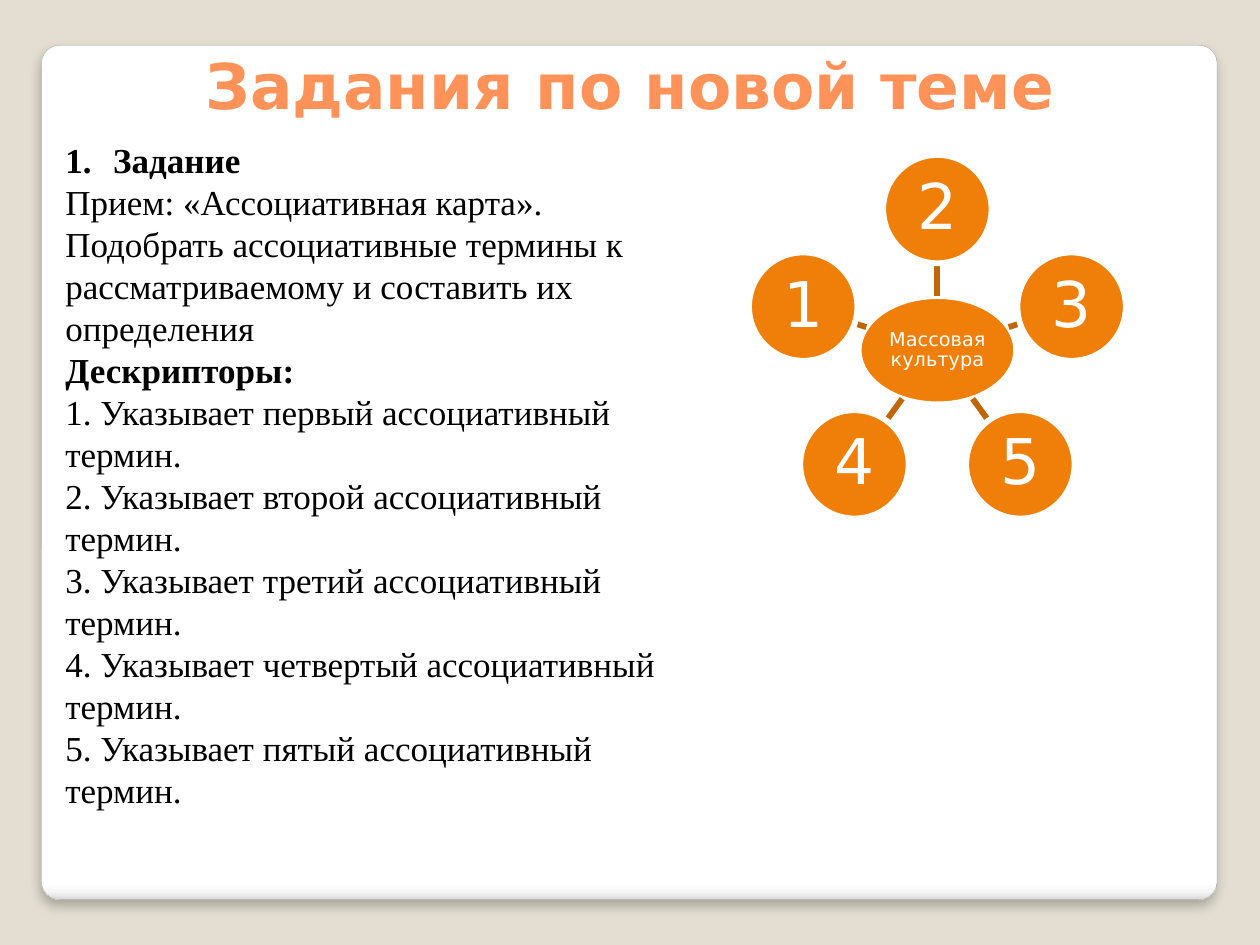
from dataclasses import dataclass
from math import cos, hypot, radians, sin

from lxml import etree
from pptx import Presentation
from pptx.dml.color import RGBColor
from pptx.enum.shapes import MSO_CONNECTOR, MSO_SHAPE
from pptx.enum.text import MSO_ANCHOR, PP_ALIGN
from pptx.oxml import parse_xml
from pptx.oxml.ns import nsdecls, qn
from pptx.util import Inches, Pt

CENTER = PP_ALIGN.CENTER
MIDDLE, BOTTOM = MSO_ANCHOR.MIDDLE, MSO_ANCHOR.BOTTOM
OVAL, ROUNDED = MSO_SHAPE.OVAL, MSO_SHAPE.ROUNDED_RECTANGLE
STRAIGHT = MSO_CONNECTOR.STRAIGHT


@dataclass(frozen=True)
class Theme:
    background = RGBColor.from_string("E3DED1")
    panel_line = RGBColor.from_string("A4A4A4")
    title = RGBColor.from_string("FF9258")
    bubble = RGBColor.from_string("F07F09")
    spoke = RGBColor.from_string("C06607")
    white = RGBColor.from_string("FFFFFF")
    black = RGBColor.from_string("000000")
    sans = "DejaVu Sans"
    serif = "Times New Roman"
    large = Pt(36)
    body = Pt(20)
    small = Pt(11)
    stroke = Pt(3.35)


theme = Theme()


def style(p, name, size, color, bold=False):
    p.font.name, p.font.size, p.font.bold = name, size, bold
    p.font.color.rgb = color


def add_bubble(x, y, w, h, text, size, inset):
    """Add an ellipse centred on x, y with its label."""
    sp = s.shapes.add_shape(OVAL, Inches(x - w / 2), Inches(y - h / 2), Inches(w), Inches(h))
    sp.shadow.inherit = False
    sp.fill.solid()
    sp.fill.fore_color.rgb = theme.bubble
    sp.line.color.rgb = theme.white
    sp.line.width = theme.stroke
    tf = sp.text_frame
    tf.word_wrap = True
    tf.vertical_anchor = MIDDLE
    tf.margin_left = tf.margin_right = tf.margin_top = tf.margin_bottom = Inches(inset)
    p = tf.paragraphs[0]
    p.text = text
    p.alignment = CENTER
    p.line_spacing = 0.9
    style(p, theme.sans, size, theme.white)


prs = Presentation()
prs.slide_width, prs.slide_height = Inches(10), Inches(7.5)
s = prs.slides.add_slide(prs.slide_layouts[6])
s.background.fill.solid()
s.background.fill.fore_color.rgb = theme.background

# White panel with a shaded lower edge and a soft shadow
panel = s.shapes.add_shape(ROUNDED, Inches(0.33), Inches(0.36), Inches(9.33), Inches(6.78))
panel.adjustments[0] = 0.021
panel.line.color.rgb = theme.panel_line
panel.line.width = Pt(0.16)
panel.shadow.inherit = False
stops = "".join(
    f'<a:gs pos="{pos * 1000}"><a:srgbClr val="{color}"/></a:gs>'
    for pos, color in [(0, "FFFFFF"), (98, "FFFFFF"), (99, "F7F7F7"), (100, "DADADA")]
)
panel_pr = panel._element.spPr
panel_pr.find(qn("a:ln")).addprevious(parse_xml(
    f'<a:gradFill {nsdecls("a")}><a:gsLst>{stops}</a:gsLst>'
    '<a:lin ang="5400000" scaled="0"/></a:gradFill>'
))
panel_pr.find(qn("a:effectLst")).append(parse_xml(
    f'<a:outerShdw {nsdecls("a")} blurRad="{Pt(6)}" dist="{Pt(4)}" dir="5400000">'
    '<a:srgbClr val="000000"><a:alpha val="25000"/></a:srgbClr></a:outerShdw>'
))

# Task text
tasks = [
    ("Задание", True),
    ("Прием: «Ассоциативная карта».", False),
    ("Подобрать ассоциативные термины к рассматриваемому и составить их определения", False),
    ("Дескрипторы:", True),
]
ordinals = ["первый", "второй", "третий", "четвертый", "пятый"]
tasks += [(f"{i}. Указывает {word} ассоциативный термин.", False)
          for i, word in enumerate(ordinals, 1)]

tf = s.shapes.add_textbox(Inches(0.42), Inches(1.05), Inches(5.29), Inches(5.49)).text_frame
tf.word_wrap = True
for i, (text, bold) in enumerate(tasks):
    p = tf.paragraphs[0] if i == 0 else tf.add_paragraph()
    p.text = text
    p.line_spacing = Pt(24)
    style(p, theme.serif, theme.body, theme.black, bold)

# Automatic number on the first line
pPr = tf.paragraphs[0]._p.get_or_add_pPr()
pPr.set("marL", str(Inches(0.38)))
pPr.set("indent", str(-Inches(0.38)))
number = parse_xml(f'<a:buAutoNum {nsdecls("a")} type="arabicPeriod"/>')
pPr.find(qn("a:lnSpc")).addnext(number)

# Title
tf = s.shapes.add_textbox(Inches(0.5), Inches(0.3), Inches(9), Inches(0.72)).text_frame
tf.word_wrap = True
tf.vertical_anchor = BOTTOM
p = tf.paragraphs[0]
p.text = "Задания по новой теме"
p.alignment = CENTER
style(p, theme.sans, theme.large, theme.title, True)

# Association map: hub, then a spoke and a bubble every 72 degrees
hub_x, hub_y, hub_w, size, orbit = 7.44, 2.78, 1.25, 0.86, 1.12
add_bubble(hub_x, hub_y, hub_w, size, "Массовая культура", theme.small, 0.01)
for i, label in enumerate("23541"):
    angle = radians(-90 + 72 * i)
    dx, dy = cos(angle), sin(angle)
    start = 1 / hypot(dx / (hub_w / 2), dy / (size / 2))
    end = orbit - size / 2
    spoke = s.shapes.add_connector(
        STRAIGHT,
        Inches(hub_x + start * dx), Inches(hub_y + start * dy),
        Inches(hub_x + end * dx), Inches(hub_y + end * dy),
    )
    spoke.line.color.rgb = theme.spoke
    spoke.line.width = theme.stroke
    etree.SubElement(spoke._element.spPr, qn("a:effectLst"))
    add_bubble(hub_x + orbit * dx, hub_y + orbit * dy, size, size, label, theme.large, 0.03)

prs.save("out.pptx")
